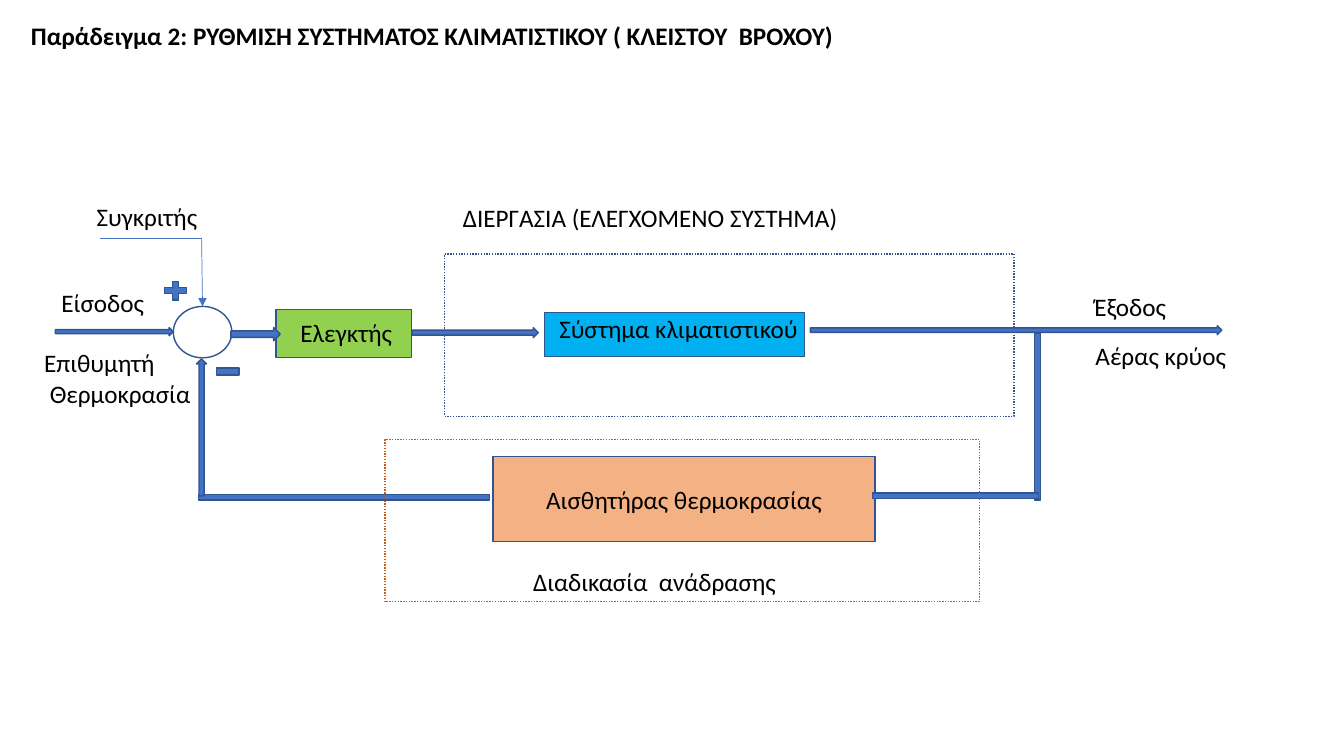
from lxml.etree import SubElement
from pptx import Presentation
from pptx.dml.color import RGBColor
from pptx.enum.dml import MSO_LINE
from pptx.enum.shapes import MSO_CONNECTOR, MSO_SHAPE as Shape
from pptx.enum.text import MSO_ANCHOR, PP_ALIGN
from pptx.oxml.ns import qn
from pptx.util import Pt

BLACK = RGBColor(0x00, 0x00, 0x00)
BLUE = RGBColor(0x44, 0x72, 0xC4)
NAVY = RGBColor(0x32, 0x54, 0x91)
SKY = RGBColor(0x00, 0xB0, 0xF0)
GREEN = RGBColor(0x92, 0xD0, 0x50)
PEACH = RGBColor(0xF4, 0xB1, 0x83)
RUST = RGBColor(0xC5, 0x5A, 0x11)


def write(frame, text, size=18, bold=False, color=BLACK, font="Calibri",
          align=PP_ALIGN.LEFT, indents=()):
    """Fill a text frame, one paragraph per line; indents are per paragraph."""
    frame.word_wrap = True
    for index, line in enumerate(text.split("\n")):
        para = frame.paragraphs[0] if index == 0 else frame.add_paragraph()
        para.alignment = align
        if index < len(indents):
            para._p.get_or_add_pPr().set("marL", str(Pt(indents[index])))
        span = para.add_run()
        span.text = line
        span.font.name = font
        span.font.size = Pt(size)
        span.font.bold = bold
        span.font.color.rgb = color


class Diagram:
    def __init__(self, page):
        self.shapes = page.shapes
        self.outline_width = 1
        self.lead_width = 0.5

    def label(self, left, top, width, text, height=29, **style):
        box = self.shapes.add_textbox(Pt(left), Pt(top), Pt(width), Pt(height))
        write(box.text_frame, text, **style)

    def block(self, kind, left, top, width, height, fill=BLUE, line=NAVY,
              dotted=False, turn=0):
        shape = self.shapes.add_shape(kind, Pt(left), Pt(top), Pt(width), Pt(height))
        shape.shadow.inherit = False
        shape.rotation = turn
        if fill is None:
            shape.fill.background()
        else:
            shape.fill.solid()
            shape.fill.fore_color.rgb = fill
        shape.line.color.rgb = line
        shape.line.width = Pt(self.outline_width)
        if dotted:
            shape.line.dash_style = MSO_LINE.ROUND_DOT
        return shape

    def lead(self, start, end, arrow=False):
        line = self.shapes.add_connector(
            MSO_CONNECTOR.STRAIGHT, *(Pt(value) for value in (*start, *end)))
        line.line.color.rgb = BLUE
        line.line.width = Pt(self.lead_width)
        if arrow:
            SubElement(line.line._get_or_add_ln(), qn("a:tailEnd"), type="triangle")
        SubElement(line._element.spPr, qn("a:effectLst"))


def main():
    deck = Presentation()
    deck.slide_width, deck.slide_height = Pt(960), Pt(540)
    diagram = Diagram(deck.slides.add_slide(deck.slide_layouts[6]))

    diagram.label(15, 10.8, 900, "Παράδειγμα 2: ΡΥΘΜΙΣΗ ΣΥΣΤΗΜΑΤΟΣ ΚΛΙΜΑΤΙΣΤΙΚΟΥ "
                  "( ΚΛΕΙΣΤΟΥ  ΒΡΟΧΟΥ)", bold=True)
    diagram.label(323.5, 141, 320, "ΔΙΕΡΓΑΣΙΑ (ΕΛΕΓΧΟΜΕΝΟ ΣΥΣΤΗΜΑ)")

    # Forward path
    diagram.block(Shape.RECTANGLE, 388.8, 223.2, 185.8, 31.7, fill=SKY)
    diagram.label(392.4, 220.3, 231, "Σύστημα κλιματιστικού")
    diagram.block(Shape.RECTANGLE, 317.5, 181.4, 406.8, 116, fill=None, dotted=True)
    diagram.block(Shape.RECTANGLE, 197.3, 221, 96.5, 34.6, fill=GREEN)
    diagram.label(207.4, 223.2, 95, "Ελεγκτής")
    diagram.block(Shape.OVAL, 123.8, 218.9, 41.8, 36.7, fill=None)
    for left, top, width, height in (
        (39.6, 234, 84.2, 5.8),
        (164.9, 234, 35.3, 9.4),
        (294.5, 234, 90, 7.2),
        (578.9, 232.6, 293.8, 6.5),
    ):
        diagram.block(Shape.RIGHT_ARROW, left, top, width, height)

    # Feedback path
    diagram.block(Shape.MATH_MINUS, 660.2, 288.7, 162, 18, turn=90)
    diagram.block(Shape.MATH_MINUS, 104.4, 347, 283, 16.6)
    diagram.block(Shape.UP_ARROW, 140.4, 256.3, 7.2, 97.9)
    sensor = diagram.block(Shape.RECTANGLE, 352.1, 326.2, 272.9, 60.5, fill=PEACH)
    sensor.text_frame.vertical_anchor = MSO_ANCHOR.MIDDLE
    write(sensor.text_frame, "Αισθητήρας θερμοκρασίας", align=PP_ALIGN.CENTER)
    diagram.block(Shape.MATH_MINUS, 601.9, 345.6, 161.3, 17.3)
    diagram.block(Shape.RECTANGLE, 275, 313.9, 424.8, 116, fill=None, line=RUST,
                  dotted=True)
    diagram.label(373.7, 401, 223, "Διαδικασία  ανάδρασης")

    # Comparator signs and its lead line
    diagram.block(Shape.MATH_PLUS, 114.5, 198.7, 21.6, 18)
    diagram.block(Shape.MATH_MINUS, 151.9, 254.9, 21.6, 20.9)
    diagram.lead((144, 170), (71.3, 170))
    diagram.lead((144, 170), (144.7, 218.9), arrow=True)

    # Signal names
    diagram.label(61.9, 140.4, 95, "Συγκριτής")
    diagram.label(36.7, 201.6, 85, "Είσοδος")
    diagram.label(24.5, 244.8, 128, "Επιθυμητή\nΘερμοκρασία", height=51, indents=(0, 4))
    diagram.label(774.7, 204.5, 80, "Έξοδος")
    diagram.label(775.4, 239.8, 120, "Αέρας κρύος")

    deck.save("out.pptx")


if __name__ == "__main__":
    main()
